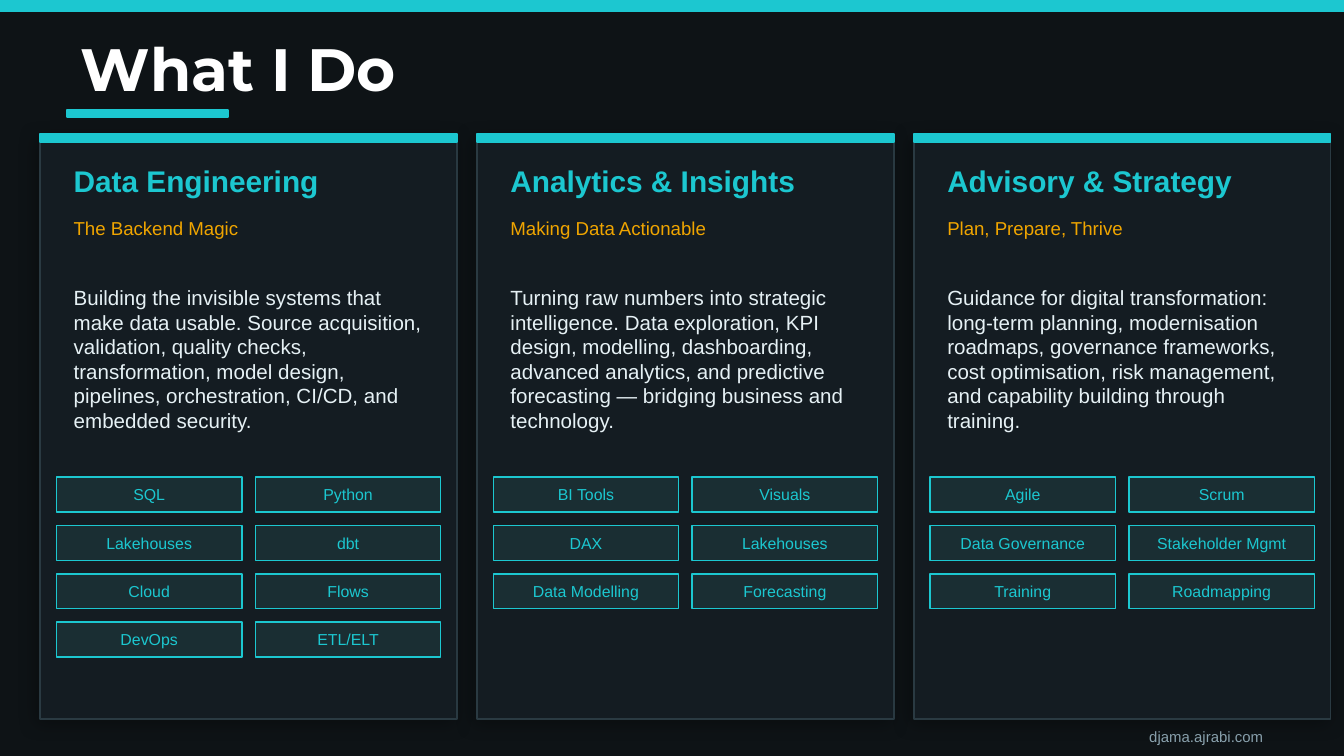
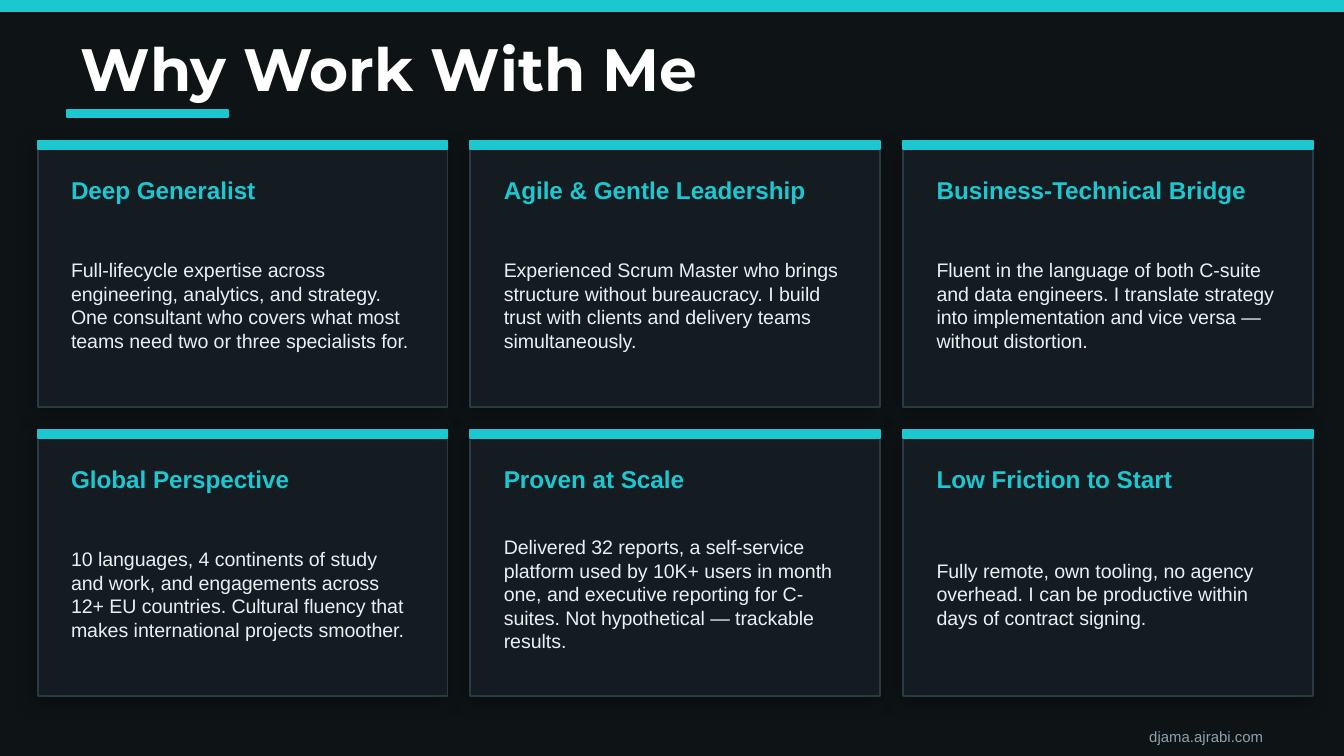
from lxml import etree
from pptx import Presentation
from pptx.dml.color import RGBColor
from pptx.enum import shapes, text
from pptx.oxml import ns
from pptx.util import Pt

COLORS = {
    "background": "0E1316", "accent": "1CC7D0", "title": "FFFFFF",
    "card": "141C22", "card_edge": "2A3A42", "subtitle": "F0A500",
    "body": "E6F1F5", "tag": "1A2E33", "footer": "8BA3AF", "shadow": "000000",
}
STYLES = {
    "title": ("title", {"name": "Montserrat", "size": Pt(32), "bold": True}),
    "service": ("accent", {"name": "Arial", "size": Pt(16), "bold": True}),
    "tagline": ("subtitle", {"name": "Arial", "size": Pt(10)}),
    "service_body": ("body", {"name": "Arial", "size": Pt(11)}),
    "tag": ("accent", {"name": "Arial", "size": Pt(8.5)}),
    "reason": ("accent", {"name": "Arial", "size": Pt(13), "bold": True}),
    "reason_body": ("body", {"name": "Arial", "size": Pt(10.5)}),
    "footer": ("footer", {"name": "Arial", "size": Pt(8)}),
}
SLIDE_W, SLIDE_H = 720, 405
MARGIN, CONTENT_W = 36, 648
CARD_PAD = 10.8
BAR_H = 4.32
LEFT, CENTER, RIGHT = (text.PP_ALIGN.LEFT, text.PP_ALIGN.CENTER,
                       text.PP_ALIGN.RIGHT)

SERVICES = [
    ("Data Engineering", "The Backend Magic",
     "Building the invisible systems that make data usable. Source "
     "acquisition, validation, quality checks, transformation, model design, "
     "pipelines, orchestration, CI/CD, and embedded security.",
     ["SQL", "Python", "Lakehouses", "dbt", "Cloud", "Flows", "DevOps",
      "ETL/ELT"]),
    ("Analytics & Insights", "Making Data Actionable",
     "Turning raw numbers into strategic intelligence. Data exploration, KPI "
     "design, modelling, dashboarding, advanced analytics, and predictive "
     "forecasting — bridging business and technology.",
     ["BI Tools", "Visuals", "DAX", "Lakehouses", "Data Modelling",
      "Forecasting"]),
    ("Advisory & Strategy", "Plan, Prepare, Thrive",
     "Guidance for digital transformation: long-term planning, modernisation "
     "roadmaps, governance frameworks, cost optimisation, risk management, "
     "and capability building through training.",
     ["Agile", "Scrum", "Data Governance", "Stakeholder Mgmt", "Training",
      "Roadmapping"]),
]
REASONS = [
    ("Deep Generalist",
     "Full-lifecycle expertise across engineering, analytics, and strategy. "
     "One consultant who covers what most teams need two or three "
     "specialists for."),
    ("Agile & Gentle Leadership",
     "Experienced Scrum Master who brings structure without bureaucracy. I "
     "build trust with clients and delivery teams simultaneously."),
    ("Business-Technical Bridge",
     "Fluent in the language of both C-suite and data engineers. I translate "
     "strategy into implementation and vice versa — without distortion."),
    ("Global Perspective",
     "10 languages, 4 continents of study and work, and engagements across "
     "12+ EU countries. Cultural fluency that makes international projects "
     "smoother."),
    ("Proven at Scale",
     "Delivered 32 reports, a self-service platform used by 10K+ users in "
     "month one, and executive reporting for C-suites. Not hypothetical — "
     "trackable results."),
    ("Low Friction to Start",
     "Fully remote, own tooling, no agency overhead. I can be productive "
     "within days of contract signing."),
]


def rgb(name):
    return RGBColor.from_string(COLORS[name])


def write(frame, words, style, align=LEFT):
    frame.word_wrap = True
    frame.auto_size = text.MSO_AUTO_SIZE.NONE
    frame.vertical_anchor = text.MSO_ANCHOR.MIDDLE
    frame.text = words
    paragraph = frame.paragraphs[0]
    paragraph.alignment = align
    color, formats = STYLES[style]
    font = paragraph.runs[0].font
    for key, value in formats.items():
        setattr(font, key, value)
    font.color.rgb = rgb(color)


def add_label(slide, words, style, x, y, w, h, align=LEFT):
    label = slide.shapes.add_textbox(Pt(x), Pt(y), Pt(w), Pt(h))
    write(label.text_frame, words, style, align)


def add_rect(slide, x, y, w, h, fill="accent", edge="accent", edge_width=1):
    rect = slide.shapes.add_shape(shapes.MSO_SHAPE.RECTANGLE,
                                  Pt(x), Pt(y), Pt(w), Pt(h))
    rect.shadow.inherit = False
    rect.fill.solid()
    rect.fill.fore_color.rgb = rgb(fill)
    rect.line.color.rgb = rgb(edge)
    rect.line.width = Pt(edge_width)
    return rect


def cast_shadow(shape):
    """Soft 30% shadow, 10 pt blur, 3 pt away at 135 degrees."""
    effects = shape.element.spPr.find(ns.qn("a:effectLst"))
    shadow = etree.SubElement(effects, ns.qn("a:outerShdw"), {
        "blurRad": str(Pt(10)), "dist": str(Pt(3)), "dir": str(135 * 60000),
        "algn": "bl", "rotWithShape": "0"})
    color = etree.SubElement(shadow, ns.qn("a:srgbClr"), val=COLORS["shadow"])
    etree.SubElement(color, ns.qn("a:alpha"), val="30000")


def add_card(slide, x, y, w, h):
    cast_shadow(add_rect(slide, x, y, w, h, "card", "card_edge"))
    add_rect(slide, x, y, w, BAR_H)


def add_tag(slide, words, x, y, w, h):
    tag = add_rect(slide, x, y, w, h, "tag", "accent", 0.75)
    frame = tag.text_frame
    for side in ("left", "top", "right", "bottom"):
        setattr(frame, f"margin_{side}", 0)
    write(frame, words, "tag", CENTER)


def add_page(deck, heading):
    """Add a slide with the shared background, band, title and footer."""
    slide = deck.slides.add_slide(deck.slide_layouts[5])
    slide.background.fill.solid()
    slide.background.fill.fore_color.rgb = rgb("background")
    add_rect(slide, 0, 0, SLIDE_W, 5.76)
    title = slide.shapes.title
    title.left, title.top = Pt(MARGIN), Pt(14.4)
    title.width, title.height = Pt(CONTENT_W), Pt(43.2)
    write(title.text_frame, heading, "title")
    add_rect(slide, MARGIN, 59.04, 86.4, 3.6)
    add_label(slide, "djama.ajrabi.com", "footer",
              MARGIN, 387.36, CONTENT_W, 14.4, RIGHT)
    return slide


def add_service(slide, column, name, tagline, body, tags):
    x, y, w = 21.6 + 234 * column, 72, 223.2
    add_card(slide, x, y, w, 313.2)
    text_x, text_w = x + CARD_PAD, w - 2 * CARD_PAD
    add_label(slide, name, "service", text_x, 80.64, text_w, 32.4)
    add_label(slide, tagline, "tagline", text_x, 111.6, text_w, 21.6)
    add_label(slide, body, "service_body", text_x, 138.24, text_w, 108)
    for i, tag in enumerate(tags):
        row, side = divmod(i, 2)
        add_tag(slide, tag, x + 8.64 + 106.56 * side, 255.6 + 25.92 * row,
                99.36, 18.72)


def add_reason(slide, index, name, body):
    row, column = divmod(index, 3)
    x, y, w = 20.16 + 231.84 * column, 75.6 + 154.8 * row, 219.6
    add_card(slide, x, y, w, 142.56)
    text_x, text_w = x + CARD_PAD, w - 2 * CARD_PAD
    add_label(slide, name, "reason", text_x, y + 10.8, text_w, 30.24)
    add_label(slide, body, "reason_body", text_x, y + 44.64, text_w, 86.4)


def main():
    deck = Presentation()
    deck.slide_width, deck.slide_height = Pt(SLIDE_W), Pt(SLIDE_H)

    offer = add_page(deck, "What I Do")
    for column, service in enumerate(SERVICES):
        add_service(offer, column, *service)

    benefits = add_page(deck, "Why Work With Me")
    for index, reason in enumerate(REASONS):
        add_reason(benefits, index, *reason)

    deck.save("out.pptx")


if __name__ == "__main__":
    main()
